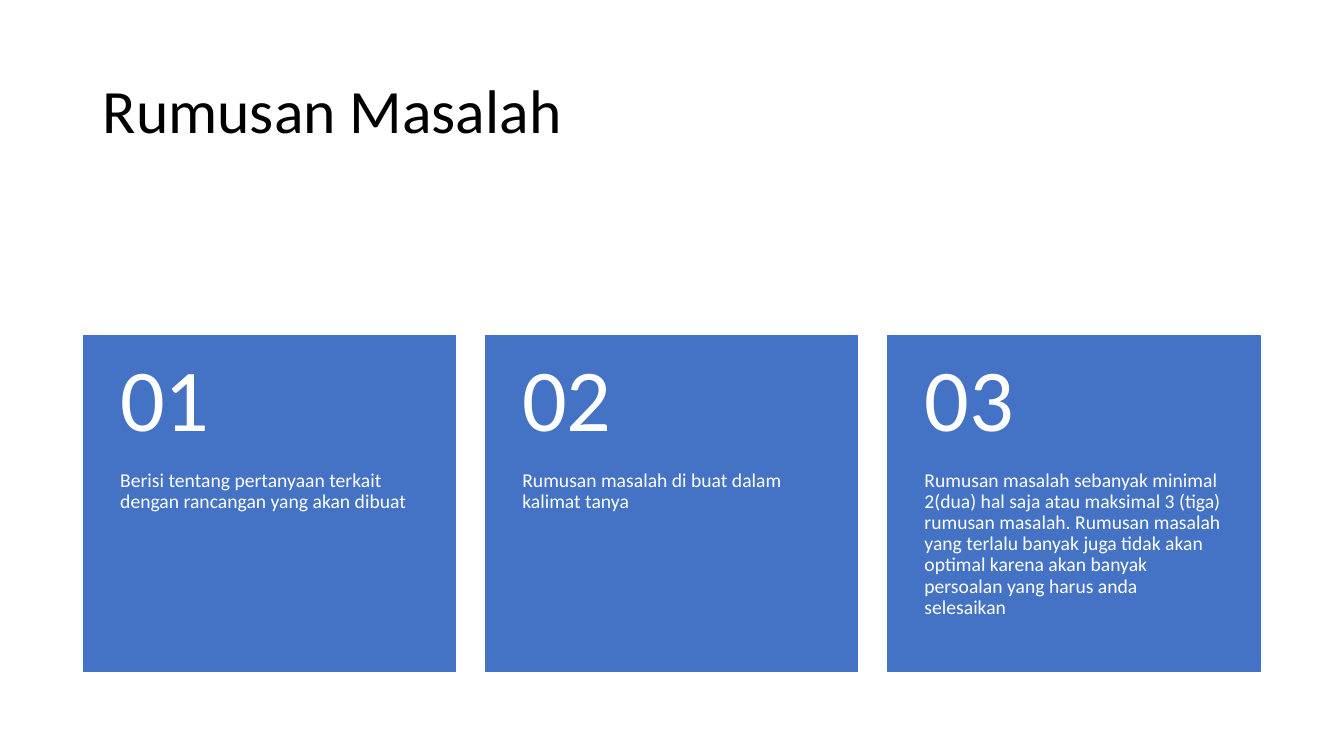
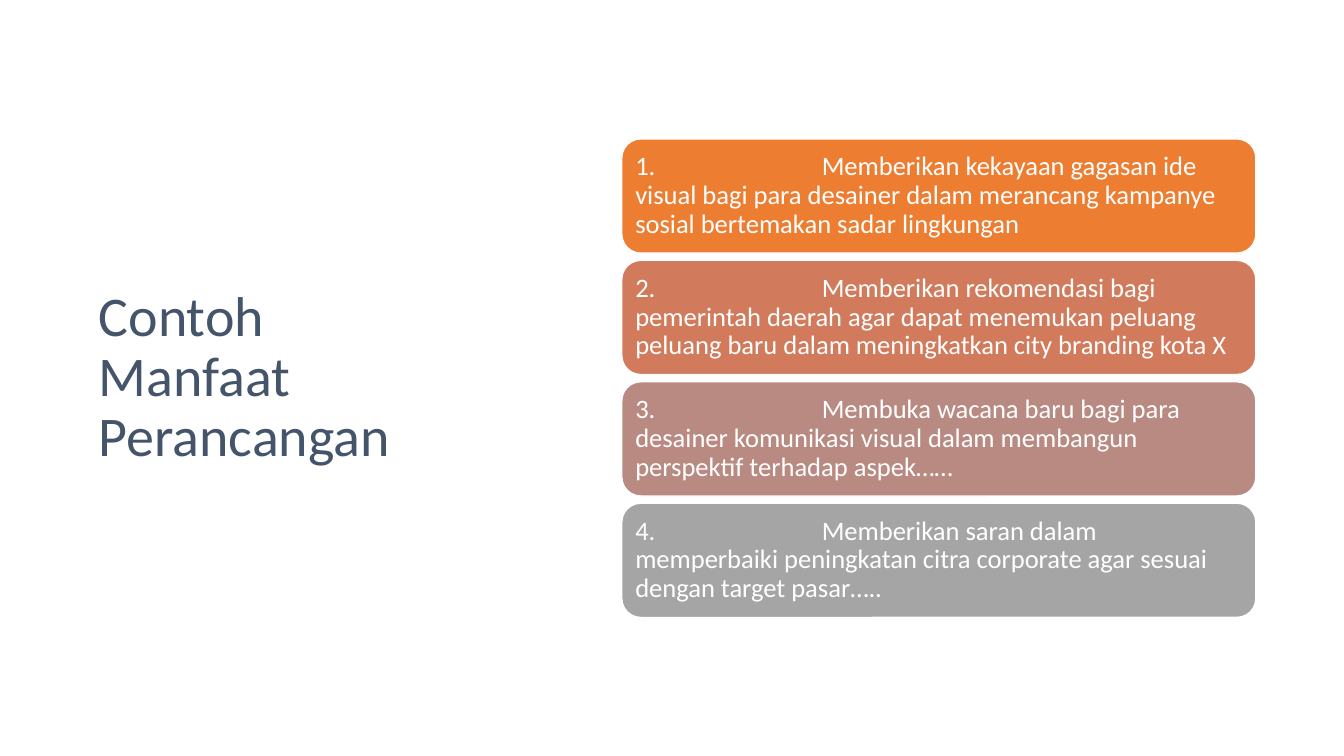
from lxml import etree
from pptx import Presentation
from pptx.dml.color import RGBColor
from pptx.enum.shapes import MSO_SHAPE as SHAPE
from pptx.enum.text import MSO_ANCHOR as ANCHOR, PP_ALIGN as ALIGN
from pptx.oxml.ns import qn
from pptx.util import Cm, Pt

FONT = "Calibri"
BLACK = RGBColor(0x00, 0x00, 0x00)
WHITE = RGBColor(0xFF, 0xFF, 0xFF)
BLUE = RGBColor(0x44, 0x72, 0xC4)
SLATE = RGBColor(0x44, 0x54, 0x6A)
ORANGE = RGBColor(0xED, 0x7D, 0x31)
TERRACOTTA = RGBColor(0xD1, 0x7B, 0x5C)
ROSE = RGBColor(0xB9, 0x8A, 0x82)
GRAY = RGBColor(0xA5, 0xA5, 0xA5)

QUESTIONS = [
    "Berisi tentang pertanyaan terkait dengan rancangan yang akan dibuat",
    "Rumusan masalah di buat dalam kalimat tanya",
    "Rumusan masalah sebanyak minimal 2(dua) hal saja atau maksimal 3 (tiga) "
    "rumusan masalah. Rumusan masalah yang terlalu banyak juga tidak akan optimal "
    "karena akan banyak persoalan yang harus anda selesaikan",
]
BENEFITS = [
    (ORANGE, "Memberikan kekayaan gagasan ide visual bagi para desainer dalam "
             "merancang kampanye sosial bertemakan sadar lingkungan"),
    (TERRACOTTA, "Memberikan rekomendasi bagi pemerintah daerah agar dapat menemukan "
                 "peluang peluang baru dalam meningkatkan city branding kota X"),
    (ROSE, "Membuka wacana baru bagi para desainer komunikasi visual dalam "
           "membangun perspektif terhadap aspek……"),
    (GRAY, "Memberikan saran dalam memperbaiki peningkatan citra corporate agar "
           "sesuai dengan target pasar….."),
]


def write(sp, text, size, color, insets, anchor=ANCHOR.MIDDLE, tab=None):
    """Fill a shape with one left-aligned paragraph, with an optional tab stop."""
    tf = sp.text_frame
    tf.word_wrap = True
    tf.vertical_anchor = anchor
    tf.margin_left, tf.margin_top, tf.margin_right, tf.margin_bottom = map(Cm, insets)
    p = tf.paragraphs[0]
    if tab:
        tabs = etree.SubElement(p._p.get_or_add_pPr(), qn("a:tabLst"))
        etree.SubElement(tabs, qn("a:tab"), pos=str(Cm(tab)), algn="l")
    p.alignment = ALIGN.LEFT
    p.line_spacing = 0.9
    r = p.add_run()
    r.text = text
    r.font.name = FONT
    r.font.size = Pt(size)
    r.font.color.rgb = color


def add_box(s, kind, box, fill, line):
    """Add a filled preset shape without shadow."""
    sp = s.shapes.add_shape(kind, *map(Cm, box))
    sp.shadow.inherit = False
    sp.fill.solid()
    sp.fill.fore_color.rgb = fill
    sp.line.color.rgb = line
    sp.line.width = Pt(1)
    return sp


def add_title(s, text, box, size, color):
    """Add the slide title."""
    sp = s.shapes.add_textbox(*map(Cm, box))
    write(sp, text, size, color, (0.25, 0.13, 0.25, 0.13))


def add_cards(s, box, texts, gap=0.76, pad=0.92):
    """Place numbered cards side by side across the box."""
    left, top, width, height = box
    card_w = (width - gap * (len(texts) - 1)) / len(texts)
    number_h = height * 0.4
    for i, text in enumerate(texts):
        x = left + i * (card_w + gap)
        card = add_box(s, SHAPE.RECTANGLE, (x, top, card_w, height), BLUE, BLUE)
        write(card, text, 14, WHITE, (pad, number_h, pad, pad), ANCHOR.TOP)
        number = s.shapes.add_textbox(*map(Cm, (x, top, card_w, number_h)))
        write(number, f"{i + 1:02}", 63, WHITE, (pad, pad / 2, pad, pad / 2))


def add_rows(s, box, rows, gap=0.18):
    """Stack numbered rounded rows down the box."""
    left, top, width, height = box
    row_h = (height - gap * (len(rows) - 1)) / len(rows)
    for i, (fill, text) in enumerate(rows):
        y = top + i * (row_h + gap)
        row = add_box(s, SHAPE.ROUNDED_RECTANGLE, (left, y, width, row_h), fill, WHITE)
        write(row, f"{i + 1}.\t{text}", 19, WHITE, (0.2,) * 4, tab=4.7)


def build_problem_slide(s):
    """Build the slide on the problem statement."""
    add_title(s, "Rumusan Masalah", (2.34, 1.01, 29.21, 3.68), 44, BLACK)
    add_cards(s, (2.11, 8.46, 29.64, 8.47), QUESTIONS)


def build_benefit_slide(s):
    """Build the slide with sample design benefits."""
    add_title(s, "Contoh Manfaat Perancangan", (2.24, 4.29, 9.45, 10.49), 40, SLATE)
    add_rows(s, (15.67, 3.5, 15.98, 12.06), BENEFITS)


def main():
    """Create and save the presentation."""
    prs = Presentation()
    prs.slide_width, prs.slide_height = Cm(33.87), Cm(19.05)
    for build in (build_problem_slide, build_benefit_slide):
        build(prs.slides.add_slide(prs.slide_layouts[6]))
    prs.save("out.pptx")


if __name__ == "__main__":
    main()
